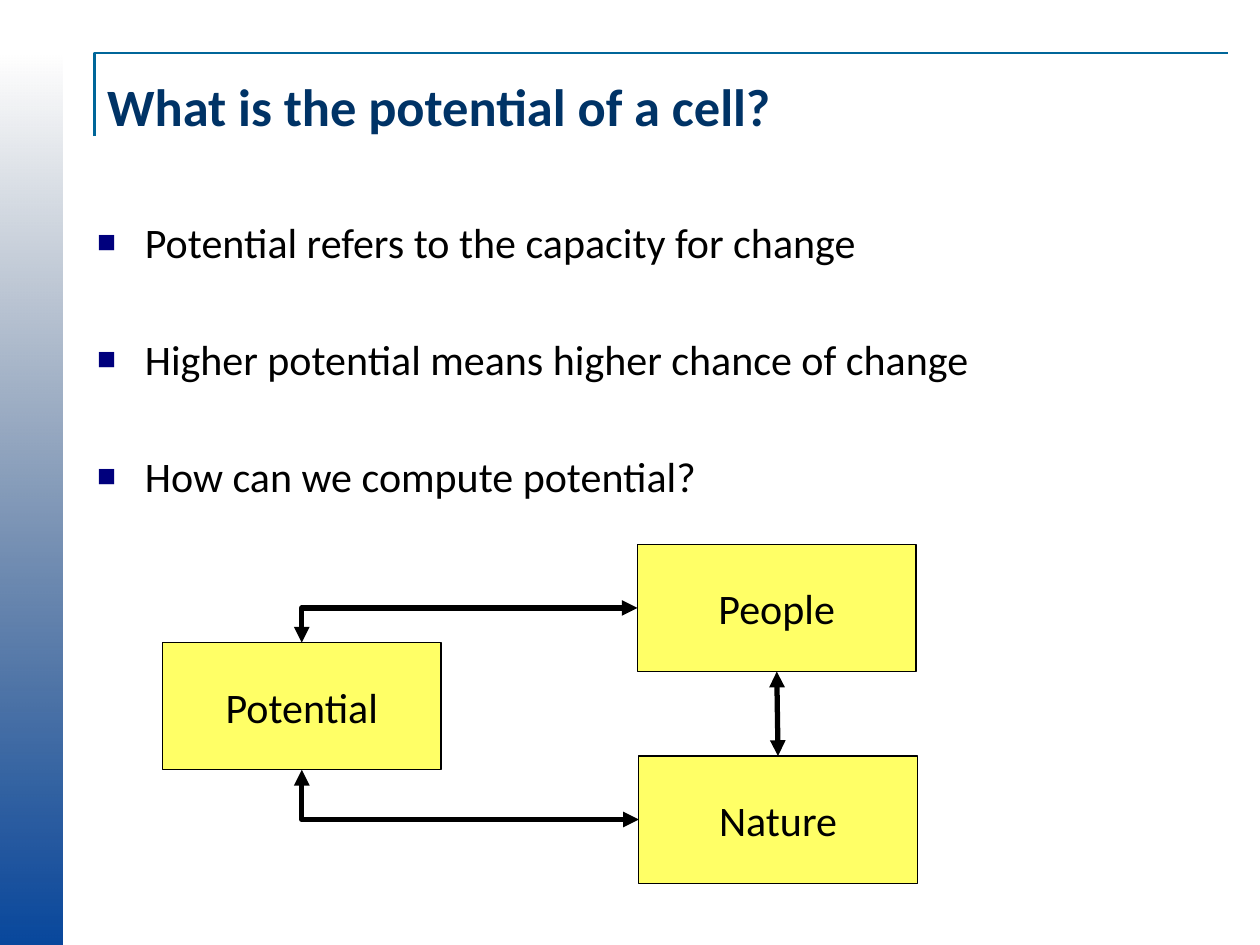
from dataclasses import dataclass

from lxml.etree import SubElement
from pptx import Presentation
from pptx.dml.color import RGBColor
from pptx.enum.shapes import MSO_CONNECTOR as Link, MSO_SHAPE as Preset
from pptx.enum.text import MSO_ANCHOR as Anchor, MSO_AUTO_SIZE as AutoSize, PP_ALIGN as Align
from pptx.oxml.ns import qn
from pptx.util import Inches, Pt

COLUMNS, ROWS = 100, 75
WIDTH, HEIGHT = Inches(10), Inches(7.5)
BOX_WIDTH, BOX_HEIGHT = 22.1, 10.1
TOP, LEFT, BOTTOM = 0, 1, 2


@dataclass
class Box:
    label: str
    column: float
    row: float


@dataclass
class Arrow:
    start: str
    start_side: int
    end: str
    end_side: int


BULLETS = [
    "Potential refers to the capacity for change",
    "Higher potential means higher chance of change",
    "How can we compute potential?",
]
BOXES = [Box("Potential", 12.9, 51), Box("People", 50.6, 43.2), Box("Nature", 50.7, 60)]
ARROWS = [
    Arrow("Potential", TOP, "People", LEFT),
    Arrow("Potential", BOTTOM, "Nature", LEFT),
    Arrow("People", BOTTOM, "Nature", TOP),
]


def across(columns: float) -> int:
    """Return the length of a number of grid columns."""
    return round(WIDTH * columns / COLUMNS)


def down(rows: float) -> int:
    """Return the length of a number of grid rows."""
    return round(HEIGHT * rows / ROWS)


def color(value: str) -> RGBColor:
    """Return the colour for a hex string."""
    return RGBColor.from_string(value)


def place(shape, column: float, row: float, columns: float, rows: float) -> None:
    """Move and size a shape on the grid."""
    shape.left, shape.top = across(column), down(row)
    shape.width, shape.height = across(columns), down(rows)


def add_bullet(para) -> None:
    """Give a paragraph a hanging square bullet."""
    props = para._p.get_or_add_pPr()
    props.set("marL", str(Inches(0.38)))
    props.set("indent", str(-Inches(0.38)))
    bullet_color = SubElement(props, qn("a:buClr"))
    SubElement(bullet_color, qn("a:srgbClr"), val="00007D")
    SubElement(props, qn("a:buSzPct"), val="75000")
    SubElement(props, qn("a:buChar"), char="■")


def write(shape, lines: list[str], size: int = 24, hue: str = "000000", bold: bool = False,
          align=Align.LEFT, anchor=Anchor.MIDDLE, wrap: bool = True,
          bullets: bool = False, gap: float = 0) -> None:
    """Fill a shape with formatted paragraphs."""
    frame = shape.text_frame
    frame.auto_size = AutoSize.NONE
    frame.word_wrap, frame.vertical_anchor = wrap, anchor
    for index, line in enumerate(lines):
        para = frame.add_paragraph() if index else frame.paragraphs[0]
        para.alignment = align
        para.space_before = Pt(gap if index else 0)
        if bullets:
            add_bullet(para)
        span = para.add_run()
        span.text = line
        span.font.name, span.font.size, span.font.bold = "Calibri", Pt(size), bold
        span.font.color.rgb = color(hue)


def send_to_back(page, shape) -> None:
    """Put a shape behind everything else on the page."""
    page.shapes._spTree.insert(2, shape._element)


def draw_frame(page) -> None:
    """Draw the corner line around the title."""
    builder = page.shapes.build_freeform(across(7.5), down(10.8))
    builder.add_line_segments(
        [(across(7.5), down(4.2)), (across(97.5), down(4.2))], close=False)
    frame = builder.convert_to_shape()
    frame.shadow.inherit = False
    frame.fill.background()
    frame.line.color.rgb, frame.line.width = color("006699"), Pt(1.5)
    send_to_back(page, frame)


def draw_strip(page) -> None:
    """Draw the fading strip along the left edge."""
    length, thickness = 70.8, 5
    strip = page.shapes.add_shape(Preset.RECTANGLE, 0, 0, 0, 0)
    place(strip, (thickness - length) / 2, ROWS - (length + thickness) / 2, length, thickness)
    strip.rotation = 270
    strip.shadow.inherit = False
    strip.line.fill.background()
    strip.fill.gradient()
    strip.fill.gradient_angle = 0
    for stop, hue, position in zip(strip.fill.gradient_stops, ("08479C", "042148"), (0, 1)):
        stop.color.rgb, stop.position = color(hue), position
    clear = strip._element.spPr.findall(".//" + qn("a:srgbClr"))[-1]
    SubElement(clear, qn("a:alpha"), val="0")
    send_to_back(page, strip)


def draw_box(page, box: Box):
    """Draw one labelled box."""
    shape = page.shapes.add_shape(Preset.RECTANGLE, 0, 0, 0, 0)
    place(shape, box.column, box.row, BOX_WIDTH, BOX_HEIGHT)
    shape.shadow.inherit = False
    shape.fill.solid()
    shape.fill.fore_color.rgb = color("FFFF66")
    shape.line.color.rgb, shape.line.width = color("000000"), Pt(0.75)
    write(shape, [box.label], align=Align.CENTER, wrap=False)
    return shape


def bend(link) -> None:
    """Turn a link into one corner that leaves vertically and arrives from the left."""
    center_x, center_y = (link.begin_x + link.end_x) // 2, (link.begin_y + link.end_y) // 2
    falls = link.end_y > link.begin_y
    link.width, link.height = link.height, link.width
    link.left, link.top = center_x - link.width // 2, center_y - link.height // 2
    link.rotation = 270
    link._element.flipH, link._element.flipV = falls, False
    link._element.spPr.find(qn("a:prstGeom")).set("prst", "bentConnector2")


def draw_arrow(page, arrow: Arrow, shapes: dict) -> None:
    """Draw a double-headed arrow between two boxes."""
    bent = arrow.end_side == LEFT
    link = page.shapes.add_connector(Link.ELBOW if bent else Link.STRAIGHT, 0, 0, 0, 0)
    link.begin_connect(shapes[arrow.start], arrow.start_side)
    link.end_connect(shapes[arrow.end], arrow.end_side)
    if bent:
        bend(link)
    link.line.color.rgb, link.line.width = color("000000"), Pt(3)
    for tag in ("a:headEnd", "a:tailEnd"):
        SubElement(link.line._get_or_add_ln(), qn(tag), type="triangle")
    SubElement(link._element.spPr, qn("a:effectLst"))


def main() -> None:
    """Build the slide and save it."""
    deck = Presentation()
    deck.slide_width, deck.slide_height = WIDTH, HEIGHT
    page = deck.slides.add_slide(deck.slide_layouts[1])
    draw_frame(page)
    draw_strip(page)
    title, body = page.placeholders
    place(title, 7.5, 4.2, 89.2, 8.3)
    write(title, ["What is the potential of a cell?"], size=30, hue="003366", bold=True)
    place(body, 6.7, 16.7, 90, 27.5)
    write(body, BULLETS, anchor=Anchor.TOP, bullets=True, gap=38)
    shapes = {box.label: draw_box(page, box) for box in BOXES}
    for arrow in ARROWS:
        draw_arrow(page, arrow, shapes)
    deck.save("out.pptx")


if __name__ == "__main__":
    main()
